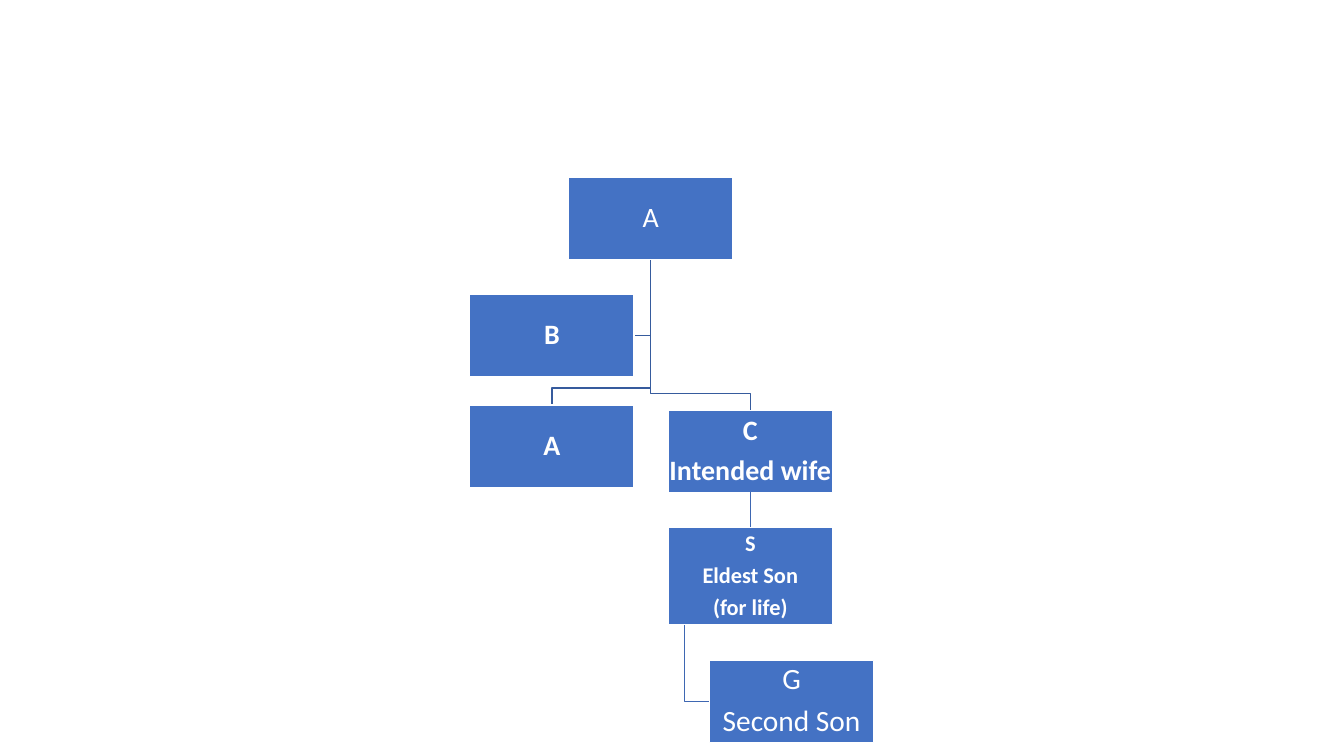
"""Build a family tree slide."""
from lxml import etree
from pptx import Presentation
from pptx import util as u
from pptx.dml.color import RGBColor
from pptx.enum import shapes, text
from pptx.oxml.ns import qn

COLORS = {"box": "4472C4", "white": "FFFFFF", "trunk": "365B9D", "branch": "3E67B2"}
WIDTH, HEIGHT, TALL = 4.14, 2.07, 2.46
DROP = 0.43

PEOPLE = {
    "root": (14.33, 4.47, HEIGHT, ["A"], 20, False),
    "son": (11.84, 10.21, HEIGHT, ["A"], 20, True),
    "wife": (16.84, 10.34, HEIGHT, ["C", "Intended wife"], 20, True),
    "eldest": (16.84, 13.28, TALL, ["S", "Eldest Son", "(for life)"], 16, True),
    "second": (17.88, 16.64, HEIGHT, ["G", "Second Son"], 21, False),
    "partner": (11.84, 7.42, HEIGHT, ["B"], 20, True),
}


class TreePage:
    """Hold the tree style and the page it is drawn on."""

    def __init__(self, page, font="Calibri", weight=1):
        self.page = page
        self.font = font
        self.weight = u.Pt(weight)

    def color(self, name):
        """Return a named colour."""
        return RGBColor.from_string(COLORS[name])

    def stroke(self, line, name):
        """Give a line its colour and weight."""
        line.color.rgb = self.color(name)
        line.width = self.weight

    def elbow(self, points, color):
        """Draw an open line with square corners."""
        start, *rest = [(u.Cm(x), u.Cm(y)) for x, y in points]
        builder = self.page.shapes.build_freeform(*start)
        builder.add_line_segments(rest, close=False)
        shape = builder.convert_to_shape()
        shape.shadow.inherit = False
        shape.fill.background()
        self.stroke(shape.line, color)

    def person(self, left, top, height, lines, size, bold):
        """Draw a box with centred lines of text."""
        box = self.page.shapes.add_shape(
            shapes.MSO_SHAPE.RECTANGLE, u.Cm(left), u.Cm(top), u.Cm(WIDTH), u.Cm(height))
        box.shadow.inherit = False
        box.fill.solid()
        box.fill.fore_color.rgb = self.color("box")
        self.stroke(box.line, "white")
        frame = box.text_frame
        frame.word_wrap = True
        frame.vertical_anchor = text.MSO_ANCHOR.MIDDLE
        frame.margin_left = frame.margin_right = u.Cm(0.03)
        frame.margin_top = frame.margin_bottom = u.Cm(0.03)
        for index, line in enumerate(lines):
            para = frame.add_paragraph() if index else frame.paragraphs[0]
            para.alignment = text.PP_ALIGN.CENTER
            para.line_spacing = 0.9
            para.space_after = u.Pt(round(size * 0.35, 1))
            span = para.add_run()
            span.text = line
            span.font.name = self.font
            span.font.size = u.Pt(size)
            span.font.bold = bold
            span.font.color.rgb = self.color("white")
        return box

    def link(self, upper, lower, color):
        """Join the bottom of one box to the top of another."""
        line = self.page.shapes.add_connector(shapes.MSO_CONNECTOR.STRAIGHT, 0, 0, 0, 0)
        line.begin_connect(upper, 2)
        line.end_connect(lower, 0)
        self.stroke(line.line, color)
        etree.SubElement(line._element.spPr, qn("a:effectLst"))


def main():
    """Create and save the deck."""
    deck = Presentation()
    deck.slide_width, deck.slide_height = u.Cm(33.87), u.Cm(19.05)
    tree = TreePage(deck.slides.add_slide(deck.slide_layouts[6]))

    left, top = PEOPLE["root"][:2]
    trunk, base = left + WIDTH / 2, top + HEIGHT
    left, top = PEOPLE["partner"][:2]
    middle = top + HEIGHT / 2
    tree.elbow([(trunk, base), (trunk, middle), (left + WIDTH, middle)], "trunk")
    left, top = PEOPLE["eldest"][:2]
    rail, start = left + WIDTH / 10, top + TALL
    left, top = PEOPLE["second"][:2]
    middle = top + HEIGHT / 2
    tree.elbow([(rail, start), (rail, middle), (left, middle)], "branch")
    for name in ("wife", "son"):
        left, top = PEOPLE[name][:2]
        center, turn = left + WIDTH / 2, top - DROP
        tree.elbow([(trunk, base), (trunk, turn), (center, turn), (center, top)], "trunk")

    boxes = {name: tree.person(*details) for name, details in PEOPLE.items()}
    tree.link(boxes["wife"], boxes["eldest"], "branch")
    deck.save("out.pptx")


if __name__ == "__main__":
    main()
